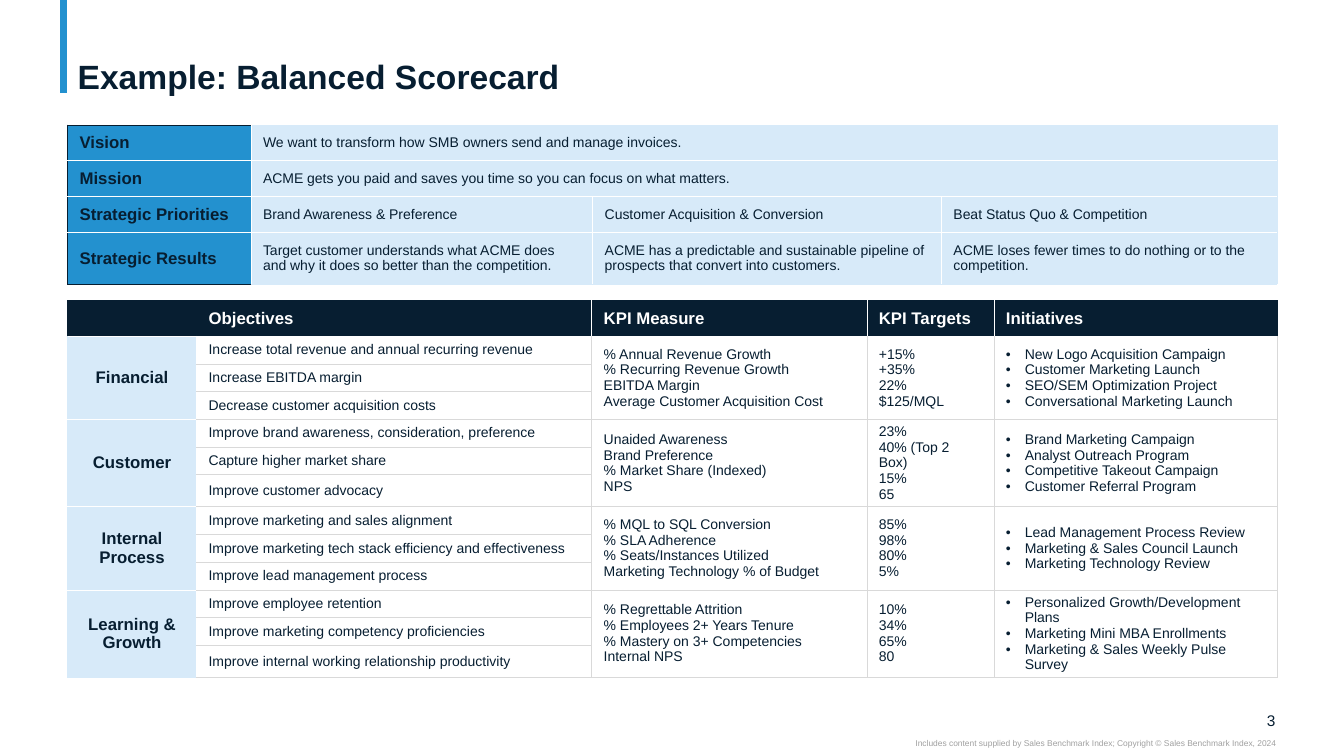
"""Build a balanced scorecard slide with a strategy table and a KPI table."""
from dataclasses import dataclass

from lxml import etree
from pptx import Presentation
from pptx.dml.color import RGBColor
from pptx.enum import shapes, text
from pptx.oxml import ns
from pptx.util import Pt


@dataclass(frozen=True)
class Theme:
    font: str = "Arial"
    navy: str = "071E31"
    blue: str = "2391CF"
    pale: str = "D7EAF9"
    white: str = "FFFFFF"
    grid: str = "D9D9D9"
    muted: str = "A0A0A0"
    title: float = 24
    heading: float = 12
    number: float = 11
    body: float = 10
    footer: float = 6


THEME = Theme()
LEFT = 48.24
ALIGN = text.PP_ALIGN

STRATEGY = [
    ("Vision", ["We want to transform how SMB owners send and manage invoices."]),
    ("Mission", ["ACME gets you paid and saves you time so you can focus on what matters."]),
    ("Strategic Priorities", ["Brand Awareness & Preference",
                              "Customer Acquisition & Conversion",
                              "Beat Status Quo & Competition"]),
    ("Strategic Results", [
        "Target customer understands what ACME does and why it does so better than the competition.",
        "ACME has a predictable and sustainable pipeline of prospects that convert into customers.",
        "ACME loses fewer times to do nothing or to the competition."]),
]
HEADINGS = ["", "Objectives", "KPI Measure", "KPI Targets", "Initiatives"]
SCORECARD = [
    ("Financial",
     ["Increase total revenue and annual recurring revenue", "Increase EBITDA margin",
      "Decrease customer acquisition costs"],
     ["% Annual Revenue Growth", "% Recurring Revenue Growth", "EBITDA Margin",
      "Average Customer Acquisition Cost"],
     ["+15%", "+35%", "22%", "$125/MQL"],
     ["New Logo Acquisition Campaign", "Customer Marketing Launch",
      "SEO/SEM Optimization Project", "Conversational Marketing Launch"]),
    ("Customer",
     ["Improve brand awareness, consideration, preference", "Capture higher market share",
      "Improve customer advocacy"],
     ["Unaided Awareness", "Brand Preference", "% Market Share (Indexed)", "NPS"],
     ["23%", "40% (Top 2 Box)", "15%", "65"],
     ["Brand Marketing Campaign", "Analyst Outreach Program",
      "Competitive Takeout Campaign", "Customer Referral Program"]),
    ("Internal Process",
     ["Improve marketing and sales alignment",
      "Improve marketing tech stack efficiency and effectiveness",
      "Improve lead management process"],
     ["% MQL to SQL Conversion", "% SLA Adherence", "% Seats/Instances Utilized",
      "Marketing Technology % of Budget"],
     ["85%", "98%", "80%", "5%"],
     ["Lead Management Process Review", "Marketing & Sales Council Launch",
      "Marketing Technology Review"]),
    ("Learning & Growth",
     ["Improve employee retention", "Improve marketing competency proficiencies",
      "Improve internal working relationship productivity"],
     ["% Regrettable Attrition", "% Employees 2+ Years Tenure",
      "% Mastery on 3+ Competencies", "Internal NPS"],
     ["10%", "34%", "65%", "80"],
     ["Personalized Growth/Development Plans", "Marketing Mini MBA Enrollments",
      "Marketing & Sales Weekly Pulse Survey"]),
]


def rgb(colour):
    """Return a colour object for a hex string."""
    return RGBColor.from_string(colour)


def add_bullet(para):
    """Give a paragraph a hanging round bullet."""
    properties = para._p.get_or_add_pPr()
    properties.set("marL", str(Pt(13.5)))
    properties.set("indent", str(Pt(-13.5)))
    etree.SubElement(properties, ns.qn("a:buFont"), typeface=THEME.font)
    etree.SubElement(properties, ns.qn("a:buChar"), char="•")


def write(frame, lines, size, colour=THEME.navy, bold=False, align=ALIGN.LEFT, bullet=False):
    """Write one paragraph per line in a single style."""
    for index, line in enumerate(lines):
        para = frame.add_paragraph() if index else frame.paragraphs[0]
        para.text = line
        para.alignment = align
        if bullet:
            add_bullet(para)
        para.font.name = THEME.font
        para.font.size = Pt(size)
        para.font.bold = bold
        para.font.color.rgb = rgb(colour)
        if not line:
            para._p.get_or_add_endParaRPr().set("sz", str(size * 100))


def style_cell(cell, fill, left, right, top, bottom):
    """Set the fill, margins and border colours of a cell."""
    properties = cell._tc.get_or_add_tcPr()
    for side, colour in zip("LRTB", (left, right, top, bottom)):
        line = etree.SubElement(properties, ns.qn(f"a:ln{side}"), w=str(Pt(0.5)))
        solid = etree.SubElement(line, ns.qn("a:solidFill"))
        etree.SubElement(solid, ns.qn("a:srgbClr"), val=colour)
    cell.fill.solid()
    cell.fill.fore_color.rgb = rgb(fill)
    cell.vertical_anchor = text.MSO_ANCHOR.MIDDLE
    cell.margin_left = cell.margin_right = Pt(8.64)
    cell.margin_top = cell.margin_bottom = Pt(2.88)


def add_grid(page, top, widths, heights):
    """Add an unbanded table with the given column widths and row heights."""
    grid = page.shapes.add_table(len(heights), len(widths), Pt(LEFT), Pt(top),
                                 Pt(sum(widths)), Pt(sum(heights))).table
    grid.first_row = grid.horz_banding = False
    for column, width in zip(grid.columns, widths):
        column.width = Pt(width)
    for row, height in zip(grid.rows, heights):
        row.height = Pt(height)
    return grid


def add_strategy(page):
    """Add the vision, mission and strategy table."""
    grid = add_grid(page, 89.2, [131.04, 244.08, 249.12, 239.76], [25.6, 25.6, 25.6, 36.8])
    last = len(STRATEGY) - 1
    for row, (label, values) in enumerate(STRATEGY):
        for column in range(4):
            fill, frame = (THEME.pale, THEME.pale) if column else (THEME.blue, THEME.navy)
            style_cell(grid.cell(row, column), fill,
                       THEME.white if column else frame,
                       frame if column == 3 or len(values) == 1 and column else THEME.white,
                       THEME.white if row else frame,
                       frame if row == last else THEME.white)
        write(grid.cell(row, 0).text_frame, [label], THEME.heading, bold=True)
        for column, value in enumerate(values, 1):
            write(grid.cell(row, column).text_frame, [value], THEME.body)
        if len(values) == 1:
            grid.cell(row, 1).merge(grid.cell(row, 3))


def add_scorecard(page):
    """Add the table of objectives, measures, targets and initiatives."""
    plain, tall = [19.8] * 3, [19.8, 19.8, 22.9]
    grid = add_grid(page, 214.56, [92.16, 282.24, 196.56, 90.72, 202.32],
                    [25.6] + (plain + tall) * 2)
    white, navy, line = THEME.white, THEME.navy, THEME.grid
    for column, heading in enumerate(HEADINGS):
        cell = grid.cell(0, column)
        style_cell(cell, navy, white if column > 1 else navy,
                   white if column in (1, 2, 3) else navy, navy, white)
        write(cell.text_frame, [heading], THEME.heading, white, True)
    for group, (name, objectives, *details) in enumerate(SCORECARD):
        first = 1 + 3 * group
        top = line if group else white
        base = THEME.pale if group == len(SCORECARD) - 1 else white
        for row, objective in enumerate(objectives, first):
            style_cell(grid.cell(row, 0), THEME.pale, THEME.pale, white, white, base)
            style_cell(grid.cell(row, 1), white, white, line,
                       top if row == first else line, line)
            write(grid.cell(row, 1).text_frame, [objective], THEME.body)
            for column in (2, 3, 4):
                style_cell(grid.cell(row, column), white, line, line, top, line)
        write(grid.cell(first, 0).text_frame, [name], THEME.heading, bold=True,
              align=ALIGN.CENTER)
        for column, lines in enumerate(details, 2):
            write(grid.cell(first, column).text_frame, lines, THEME.body, bullet=column == 4)
        for column in (0, 2, 3, 4):
            grid.cell(first, column).merge(grid.cell(first + 2, column))


def place_frame(box, left, top, width, height, anchor, inset=0):
    """Position a text shape and set its wrapping, anchor and side insets."""
    box.left, box.top, box.width, box.height = map(Pt, (left, top, width, height))
    frame = box.text_frame
    frame.word_wrap = True
    frame.auto_size = text.MSO_AUTO_SIZE.NONE
    frame.vertical_anchor = anchor
    frame.margin_left = frame.margin_right = Pt(inset)
    frame.margin_top = frame.margin_bottom = 0
    return frame


def add_note(page, words, bounds, size, colour, anchor):
    """Add a right-aligned line of text."""
    box = page.shapes.add_textbox(0, 0, 0, 0)
    write(place_frame(box, *bounds, anchor), [words], size, colour, align=ALIGN.RIGHT)


def add_accent(page):
    """Add the vertical bar beside the title."""
    bar = page.shapes.add_connector(shapes.MSO_CONNECTOR.STRAIGHT,
                                    Pt(45.5), 0, Pt(45.5), Pt(66.5))
    bar.line.color.rgb = rgb(THEME.blue)
    bar.line.width = Pt(5)
    etree.SubElement(bar._element.spPr, ns.qn("a:effectLst"))


def main():
    """Build and save the deck."""
    deck = Presentation()
    deck.slide_width, deck.slide_height = Pt(960), Pt(540)
    page = deck.slides.add_slide(deck.slide_layouts[5])
    add_accent(page)
    anchors = text.MSO_ANCHOR
    frame = place_frame(page.shapes.title, LEFT, 30.24, 863.28, 38.88, anchors.BOTTOM, 7.2)
    write(frame, ["Example: Balanced Scorecard"], THEME.title, bold=True)
    frame.paragraphs[0].line_spacing = 0.9
    add_scorecard(page)
    add_strategy(page)
    add_note(page, "3", (887, 507.6, 24, 13.7), THEME.number, THEME.navy, anchors.MIDDLE)
    add_note(page, "Includes content supplied by Sales Benchmark Index; "
             "Copyright © Sales Benchmark Index, 2024",
             (540, 527, 371.5, 7.2), THEME.footer, THEME.muted, anchors.TOP)
    deck.save("out.pptx")


if __name__ == "__main__":
    main()
